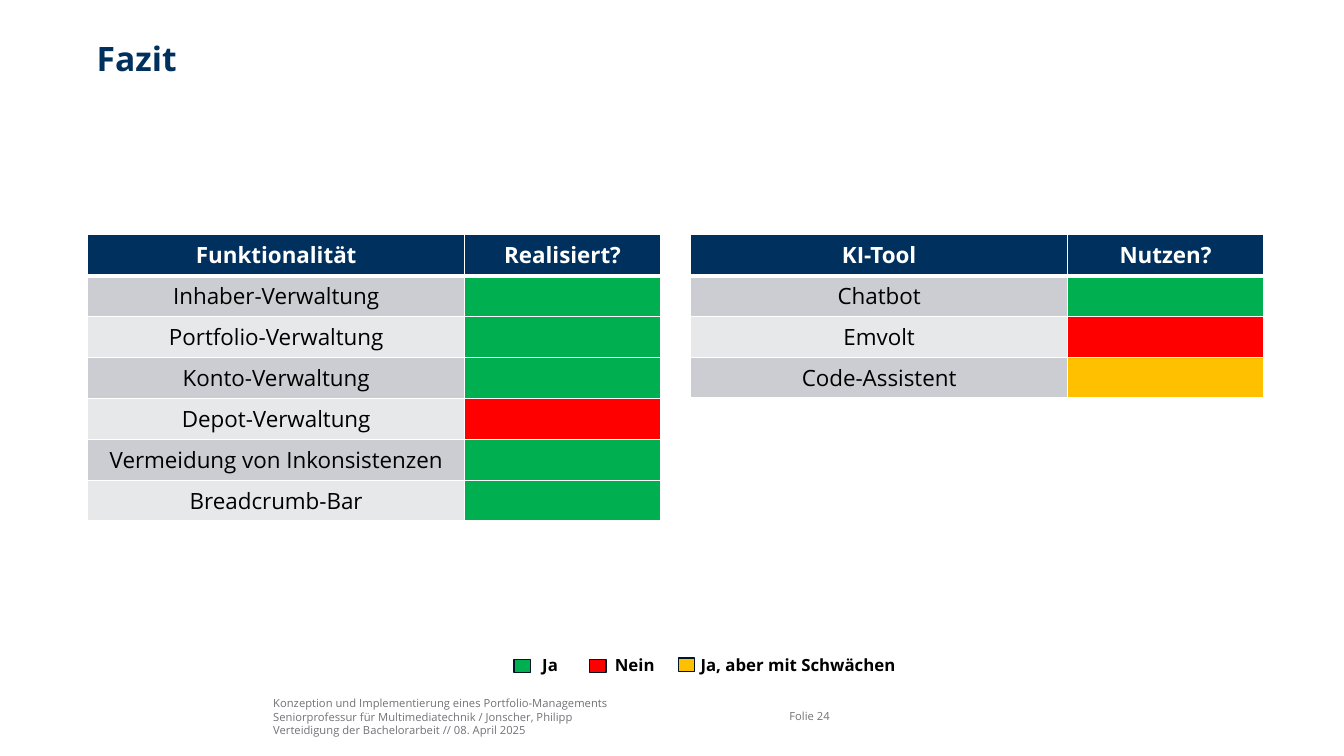
import pptx
import pptx.dml.color
import pptx.enum.shapes
import pptx.enum.text
import pptx.oxml
import pptx.oxml.ns
import pptx.util
from pptx.util import Inches

FONT = "Open Sans"
COLORS = {
    "navy": "00305D", "white": "FFFFFF", "black": "000000", "footer": "727277",
    "band_dark": "CCCDD2", "band_light": "E7E8EA", "outline": "001529",
    "yes": "00B050", "no": "FF0000", "partly": "FFC000",
}
ANCHOR = pptx.enum.text.MSO_ANCHOR

FUNCTIONS = [
    ("Inhaber-Verwaltung", "yes"),
    ("Portfolio-Verwaltung", "yes"),
    ("Konto-Verwaltung", "yes"),
    ("Depot-Verwaltung", "no"),
    ("Vermeidung von Inkonsistenzen", "yes"),
    ("Breadcrumb-Bar", "yes"),
]
TOOLS = [("Chatbot", "yes"), ("Emvolt", "no"), ("Code-Assistent", "partly")]

# Legend: status, label, swatch left, swatch top, label left, label width
LEGEND = [
    ("yes", "Ja", 5.1, 6.54, 5.28, 0.5),
    ("no", "Nein", 5.85, 6.54, 6, 0.66),
    ("partly", "Ja, aber mit Schwächen", 6.73, 6.53, 6.85, 2.23),
]


def rgb(name):
    return pptx.dml.color.RGBColor.from_string(COLORS[name])


def add_run(paragraph, text, size, color, bold=False):
    run = paragraph.add_run()
    run.text = text
    run.font.name = FONT
    run.font.size = pptx.util.Pt(size)
    run.font.bold = bold
    run.font.color.rgb = rgb(color)


def add_text(slide, box, lines, size, color, bold=False, anchor=ANCHOR.TOP, inset=True):
    frame = slide.shapes.add_textbox(*map(Inches, box)).text_frame
    frame.word_wrap = True
    frame.vertical_anchor = anchor
    if not inset:
        frame.margin_left = frame.margin_right = 0
        frame.margin_top = frame.margin_bottom = 0
    for index, line in enumerate(lines):
        paragraph = frame.add_paragraph() if index else frame.paragraphs[0]
        add_run(paragraph, line, size, color, bold)


def set_borders(cell, bottom_width):
    properties = cell._tc.get_or_add_tcPr()
    widths = {"lnL": 1, "lnR": 1, "lnT": 1, "lnB": bottom_width}
    for position, (side, width) in enumerate(widths.items()):
        border = pptx.oxml.parse_xml(
            f'<a:{side} {pptx.oxml.ns.nsdecls("a")} w="{pptx.util.Pt(width)}">'
            f'<a:solidFill><a:srgbClr val="{COLORS["white"]}"/></a:solidFill></a:{side}>')
        properties.insert(position, border)


def fill_cell(cell, fill, text="", color="black", bold=False, bottom_width=1):
    cell.fill.solid()
    cell.fill.fore_color.rgb = rgb(fill)
    set_borders(cell, bottom_width)
    if text:
        paragraph = cell.text_frame.paragraphs[0]
        paragraph.alignment = pptx.enum.text.PP_ALIGN.CENTER
        add_run(paragraph, text, 16, color, bold)


def add_status_table(slide, left, height, headings, entries):
    count = len(entries) + 1
    table = slide.shapes.add_table(
        count, 2, Inches(left), Inches(2.33), Inches(5.68), Inches(height)).table
    for column, width in zip(table.columns, (3.74, 1.94)):
        column.width = Inches(width)
    for column, heading in enumerate(headings):
        fill_cell(table.cell(0, column), "navy", heading, "white", True, 3)
    for row, (label, status) in enumerate(entries, 1):
        fill_cell(table.cell(row, 0), "band_dark" if row % 2 else "band_light", label)
        fill_cell(table.cell(row, 1), status)


def add_legend_entry(slide, status, label, left, top, label_left, label_width):
    swatch = slide.shapes.add_shape(
        pptx.enum.shapes.MSO_SHAPE.RECTANGLE,
        Inches(left), Inches(top), Inches(0.16), Inches(0.13))
    swatch.shadow.inherit = False
    swatch.fill.solid()
    swatch.fill.fore_color.rgb = rgb(status)
    swatch.line.color.rgb = rgb("outline")
    swatch.line.width = pptx.util.Pt(1)
    add_text(slide, (label_left, 6.45, label_width, 0.3), [label], 12, "black", True)


def main():
    presentation = pptx.Presentation()
    presentation.slide_width = Inches(13.33)
    presentation.slide_height = Inches(7.5)
    slide = presentation.slides.add_slide(presentation.slide_layouts[6])

    # Footer
    add_text(slide, (2.71, 6.91, 4.9, 0.4), [
        "Konzeption und Implementierung eines Portfolio-Managements",
        "Seniorprofessur für Multimediatechnik / Jonscher, Philipp",
        "Verteidigung der Bachelorarbeit // 08. April 2025",
    ], 8, "footer", anchor=ANCHOR.BOTTOM, inset=False)
    add_text(slide, (7.83, 6.9, 0.77, 0.4), ["Folie 24"], 8, "footer",
             anchor=ANCHOR.MIDDLE, inset=False)

    # Title
    add_text(slide, (0.96, 0.38, 11.57, 0.75), ["Fazit"], 24, "navy", True, inset=False)

    # Result tables
    add_status_table(slide, 0.87, 2.84, ("Funktionalität", "Realisiert?"), FUNCTIONS)
    add_status_table(slide, 6.85, 1.62, ("KI-Tool", "Nutzen?"), TOOLS)

    # Legend
    for entry in LEGEND:
        add_legend_entry(slide, *entry)

    presentation.save("out.pptx")


if __name__ == "__main__":
    main()
